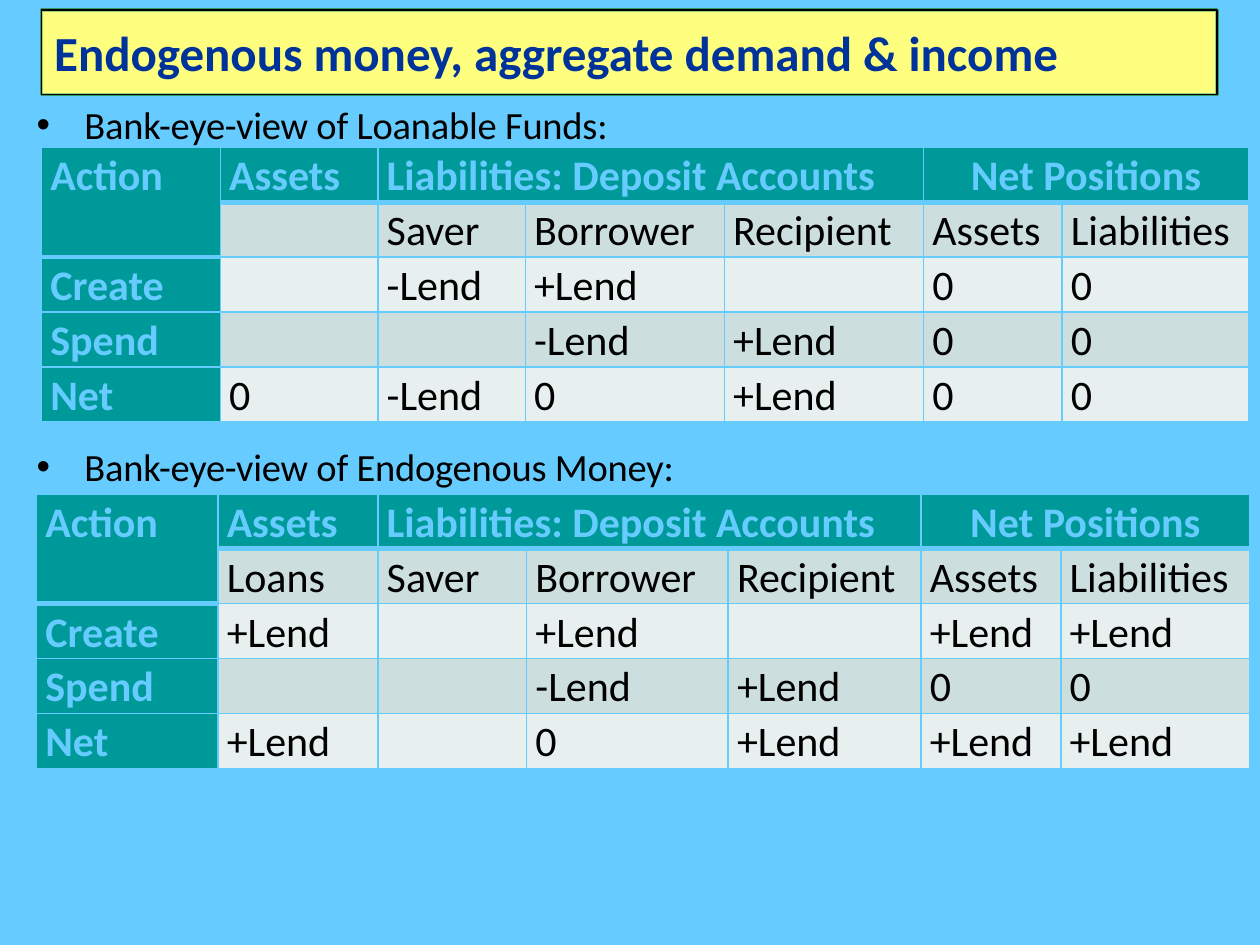
from lxml import etree
from pptx import Presentation
from pptx.dml.color import RGBColor
from pptx.enum.shapes import MSO_SHAPE
from pptx.enum.text import MSO_ANCHOR, MSO_AUTO_SIZE, PP_ALIGN
from pptx.oxml.ns import qn
from pptx.util import Inches, Pt

SKY = RGBColor(0x66, 0xCC, 0xFF)
YELLOW = RGBColor(0xFF, 0xFF, 0x66)
PALE_YELLOW = RGBColor(0xFF, 0xFF, 0x99)
GREEN = RGBColor(0x33, 0x99, 0x66)
NAVY = RGBColor(0x00, 0x33, 0x99)
TEAL = RGBColor(0x00, 0x99, 0x99)
BAND_DARK = RGBColor(0xCC, 0xDE, 0xDE)
BAND_LIGHT = RGBColor(0xE7, 0xEF, 0xEF)
BLACK = RGBColor(0, 0, 0)


def write_text(frame, text, size=24, color=BLACK, bold=False, align=PP_ALIGN.LEFT,
               before=0, line_spacing=1.0):
    paragraph = frame.paragraphs[0]
    paragraph.alignment = align
    paragraph.space_before = Pt(before)
    paragraph.line_spacing = line_spacing
    run = paragraph.add_run()
    run.text = text
    run.font.name = "Calibri"
    run.font.size = Pt(size)
    run.font.bold = bold
    run.font.color.rgb = color
    return paragraph


def set_borders(cell, top, bottom):
    properties = cell._tc.get_or_add_tcPr()
    sides = (("lnL", 1), ("lnR", 1), ("lnT", top), ("lnB", bottom))
    for index, (side, width) in enumerate(sides):
        line = etree.Element(qn(f"a:{side}"), w=str(Pt(width)))
        fill = etree.SubElement(line, qn("a:solidFill"))
        etree.SubElement(fill, qn("a:srgbClr"), val=str(SKY))
        properties.insert(index, line)


presentation = Presentation()
presentation.slide_width = Inches(10)
presentation.slide_height = Inches(7.5)
slide = presentation.slides.add_slide(presentation.slide_layouts[1])
slide.background.fill.solid()
slide.background.fill.fore_color.rgb = SKY

# Title: a translucent placeholder over a yellow bar
title = slide.shapes.title
title_box = (Inches(0.33), Inches(0.08), Inches(9.33), Inches(0.67))
title_bar = slide.shapes.add_shape(MSO_SHAPE.RECTANGLE, *title_box)
title_bar.shadow.inherit = False
title.element.addprevious(title_bar.element)
title.left, title.top, title.width, title.height = title_box
for shape, fill_color, line_color, line_width in (
        (title_bar, YELLOW, GREEN, 2), (title, PALE_YELLOW, BLACK, 1)):
    shape.fill.solid()
    shape.fill.fore_color.rgb = fill_color
    shape.line.color.rgb = line_color
    shape.line.width = Pt(line_width)
title_color = title.element.spPr.find(qn("a:solidFill")).find(qn("a:srgbClr"))
etree.SubElement(title_color, qn("a:alpha"), val="50000")
title.text_frame.auto_size = MSO_AUTO_SIZE.NONE
title.text_frame.vertical_anchor = MSO_ANCHOR.MIDDLE
write_text(title.text_frame, "Endogenous money, aggregate demand & income",
           size=28, color=NAVY, bold=True)

# Bulleted captions
body = slide.placeholders[1]
second_caption = slide.shapes.add_textbox(0, 0, 0, 0)
for shape, top, text in (
        (body, 0.75, "Bank-eye-view of Loanable Funds:"),
        (second_caption, 3.47, "Bank-eye-view of Endogenous Money:")):
    shape.left, shape.top = Inches(0.25), Inches(top)
    shape.width, shape.height = Inches(9.58), Inches(0.5)
    frame = shape.text_frame
    frame.word_wrap = True
    frame.auto_size = MSO_AUTO_SIZE.NONE
    frame.margin_left = frame.margin_right = Inches(0.04)
    frame.margin_top = frame.margin_bottom = Inches(0.05)
    paragraph = write_text(frame, text, size=22, before=2)
    paragraph.runs[0].font._element.set("spc", "-10")
    properties = paragraph._p.get_or_add_pPr()
    properties.set("marL", str(Inches(0.38)))
    properties.set("indent", str(Inches(-0.38)))
    etree.SubElement(properties, qn("a:buFont"), typeface="Arial")
    etree.SubElement(properties, qn("a:buChar"), char="•")

# Tables: both share the header row, the spans and the banding
HEADER = ["Action", "Assets", "Liabilities: Deposit Accounts", "", "", "Net Positions", ""]
loanable_funds = [
    ["", "", "Saver", "Borrower", "Recipient", "Assets", "Liabilities"],
    ["Create", "", "-Lend", "+Lend", "", "0", "0"],
    ["Spend", "", "", "-Lend", "+Lend", "0", "0"],
    ["Net", "0", "-Lend", "0", "+Lend", "0", "0"],
]
endogenous_money = [
    ["", "Loans", "Saver", "Borrower", "Recipient", "Assets", "Liabilities"],
    ["Create", "+Lend", "", "+Lend", "", "+Lend", "+Lend"],
    ["Spend", "", "", "-Lend", "+Lend", "0", "0"],
    ["Net", "+Lend", "", "0", "+Lend", "+Lend", "+Lend"],
]
for left, top, widths, rows in (
        (0.33, 1.17, (1.42, 1.25, 1.17, 1.58, 1.58, 1.1, 1.48), loanable_funds),
        (0.29, 3.92, (1.44, 1.27, 1.18, 1.6, 1.53, 1.11, 1.5), endogenous_money)):
    table = slide.shapes.add_table(5, 7, Inches(left), Inches(top),
                                   Inches(sum(widths)), Inches(2.14)).table
    for column, width in zip(table.columns, widths):
        column.width = Inches(width)
    table.cell(0, 0).merge(table.cell(1, 0))
    table.cell(0, 2).merge(table.cell(0, 4))
    table.cell(0, 5).merge(table.cell(0, 6))

    for row_index, row in enumerate([HEADER] + rows):
        for column_index, text in enumerate(row):
            cell = table.cell(row_index, column_index)
            heading = row_index == 0 or column_index == 0
            band = BAND_DARK if row_index % 2 else BAND_LIGHT
            cell.fill.solid()
            cell.fill.fore_color.rgb = TEAL if heading else band
            cell.margin_left = cell.margin_right = Inches(0.07)
            cell.margin_top = cell.margin_bottom = 0
            header_end = 1 if column_index == 0 else 0
            set_borders(cell, top=3 if row_index == header_end + 1 else 1,
                        bottom=3 if row_index in (0, header_end) else 1)
            if text:
                write_text(cell.text_frame, text, color=SKY if heading else BLACK,
                           bold=heading, line_spacing=1.07,
                           align=PP_ALIGN.CENTER if text == "Net Positions" else PP_ALIGN.LEFT)

presentation.save("out.pptx")
